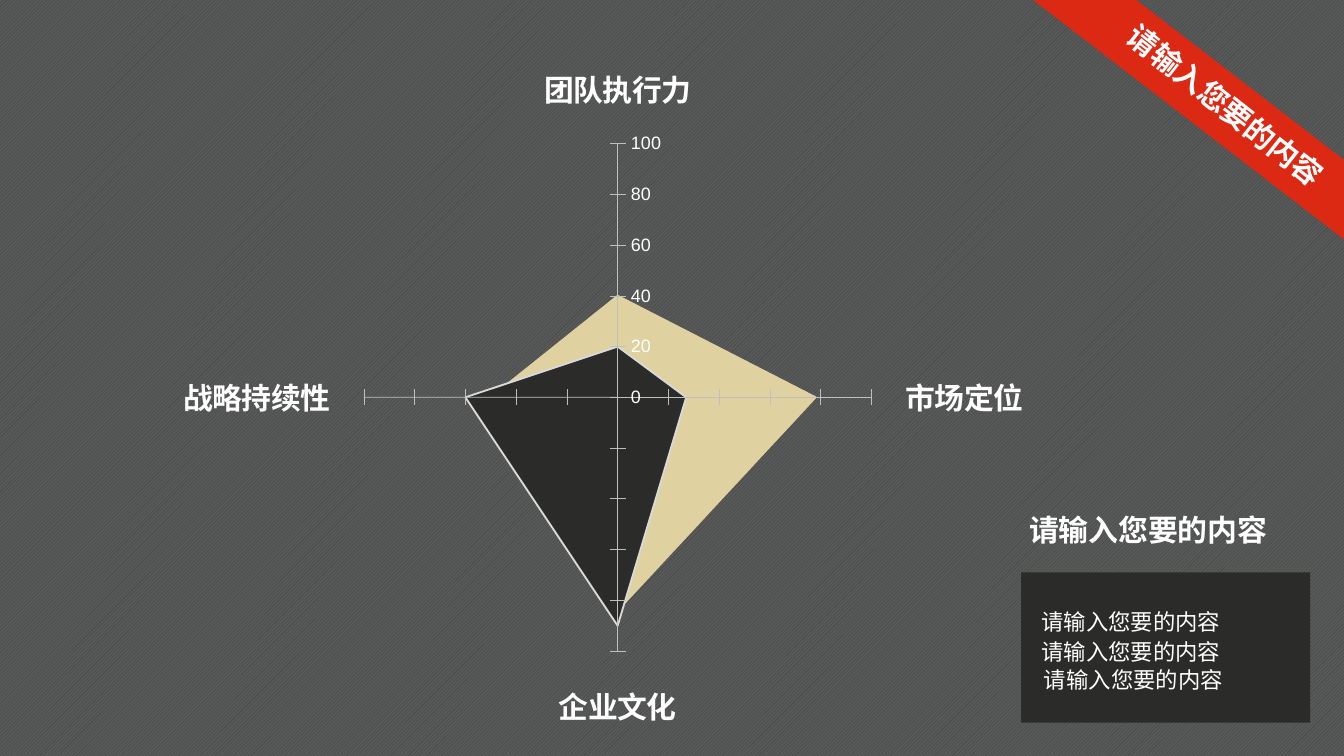
import pptx
import pptx.chart.data
import pptx.dml.color
import pptx.enum.chart
import pptx.enum.dml
import pptx.enum.shapes
import pptx.enum.text
import pptx.util
from lxml import etree

Cm, Pt = pptx.util.Cm, pptx.util.Pt
RGB = pptx.dml.color.RGBColor
TICK = pptx.enum.chart.XL_TICK_MARK

# Content
PROMPT = "请输入您要的内容"
CATS = ["团队执行力", "市场定位", "企业文化", "战略持续性"]

WHITE = RGB(0xFF, 0xFF, 0xFF)
DARK = RGB(0x2B, 0x2B, 0x29)
SAND = RGB(0xDF, 0xD2, 0xA0)
RED = RGB(0xDB, 0x29, 0x14)
PALE = RGB(0xD9, 0xD9, 0xD9)
GREY = RGB(0xBF, 0xBF, 0xBF)
SLATE = RGB(0x38, 0x43, 0x40)
STONE = RGB(0x59, 0x59, 0x59)

SERIES = [  # name, values, fill, line
    ("Series 1", (20, 27, 90, 60), DARK, PALE),
    ("Series 2", (40, 78, 84, 50), SAND, SAND),
    ("Series 3", (39, 66, 67, 49), RED, PALE),
]

# Places in cm: left, top, width, height
CHART = (2.69, 0.66, 17.88, 13.61)
PLOT = {"x": 0.234, "y": 0.151, "w": 0.537, "h": 0.705}
BAND = (15.44, 0.81, 13.77, 1.19)
TITLE = (20.5, 1.98, 6.48, 0.94)
HEAD = (19.2, 9.55, 7.67, 0.94)
PANEL = (19.3, 10.82, 5.46, 2.84)
LINES = [(19.43, 11.38), (19.43, 11.94), (19.48, 12.47)]
LINE_SIZE = (5.21, 0.76)

CJK = "Noto Sans CJK SC"
A = "{http://schemas.openxmlformats.org/drawingml/2006/main}"
C = "{http://schemas.openxmlformats.org/drawingml/2006/chart}"


def box(place):
    return [Cm(n) for n in place]


def style(font, size, name, bold=False):
    font.size, font.bold, font.name = Pt(size), bold, name
    font.color.rgb = WHITE


def add_ea(props):
    latin = props.find(A + "latin")
    ea = etree.Element(A + "ea", typeface=CJK)
    latin.addnext(ea)


def write(shape, size, bold=False):
    frame = shape.text_frame
    frame.text = PROMPT
    frame.word_wrap = True
    frame.auto_size = pptx.enum.text.MSO_AUTO_SIZE.SHAPE_TO_FIT_TEXT
    frame.vertical_anchor = pptx.enum.text.MSO_ANCHOR.TOP
    para = frame.paragraphs[0]
    para.alignment = pptx.enum.text.PP_ALIGN.LEFT
    para.line_spacing = 1.0
    para.space_before = Pt(0)
    run = para.runs[0]
    style(run.font, size, CJK, bold)
    add_ea(run.font._element)


def paint(shape, color):
    shape.fill.solid()
    shape.fill.fore_color.rgb = color
    shape.line.fill.background()
    shape.shadow.inherit = False


deck = pptx.Presentation()
deck.slide_width, deck.slide_height = Cm(25.4), Cm(14.29)
slide = deck.slides.add_slide(deck.slide_layouts[5])
shapes = slide.shapes

# Striped background
back = slide.background.fill
back.patterned()
back.pattern = pptx.enum.dml.MSO_PATTERN.DARK_UPWARD_DIAGONAL
back.fore_color.rgb, back.back_color.rgb = SLATE, STONE

# Radar chart
data = pptx.chart.data.CategoryChartData()
data.categories = CATS
for name, vals, _, _ in SERIES:
    data.add_series(name, vals)
kind = pptx.enum.chart.XL_CHART_TYPE.RADAR_FILLED
chart = shapes.add_chart(kind, *box(CHART), data).chart
chart.has_legend = chart.has_title = False
chart.font.size, chart.font.name = Pt(13.8), "Arial"
chart.plots[0].vary_by_categories = False
for ser, (_, _, fill, line) in zip(chart.plots[0].series, SERIES):
    ser.format.fill.solid()
    ser.format.fill.fore_color.rgb = fill
    ser.format.line.color.rgb = line
    ser.format.line.width = Pt(1)

cat = chart.category_axis
cat.has_major_gridlines = True
cat.major_tick_mark = TICK.OUTSIDE
style(cat.tick_labels.font, 16, CJK, True)
add_ea(cat.tick_labels.font._element)

val = chart.value_axis
val.has_major_gridlines = False
val.minimum_scale, val.maximum_scale, val.major_unit = 0, 100, 20
val.major_tick_mark = TICK.CROSS
val.format.line.color.rgb = GREY
val.format.line.width = Pt(0.34)
style(val.tick_labels.font, 9.6, "Arial")

# Fixed inner plot area
area = chart._chartSpace.find(f".//{C}plotArea")
for old in area.findall(C + "layout"):
    area.remove(old)
layout = etree.Element(C + "layout")
area.insert(0, layout)
manual = etree.SubElement(layout, C + "manualLayout")
etree.SubElement(manual, C + "layoutTarget", val="inner")
for key in "xy":
    etree.SubElement(manual, f"{C}{key}Mode", val="edge")
for key, num in PLOT.items():
    etree.SubElement(manual, C + key, val=str(num))

# Corner ribbon with the title on it
left, top, wide, high = box(BAND)
pen = shapes.build_freeform(left, top)
pen.add_line_segments(
    [(left + wide, top), (left + wide, top + high), (left, top + high)])
band = pen.convert_to_shape()
band.rotation = 217.6
paint(band, RED)

title = shapes.title
title.left, title.top, title.width, title.height = box(TITLE)
title.rotation = 38.3
write(title, 16, True)
band.element.addnext(title.element)

# Dark panel with its lines
group = shapes.add_group_shape().shapes
rect = pptx.enum.shapes.MSO_SHAPE.RECTANGLE
paint(group.add_shape(rect, *box(PANEL)), DARK)
for spot in LINES:
    write(group.add_textbox(*box(spot + LINE_SIZE)), 12)

# Panel heading
write(shapes.add_textbox(*box(HEAD)), 16, True)

deck.save("out.pptx")
